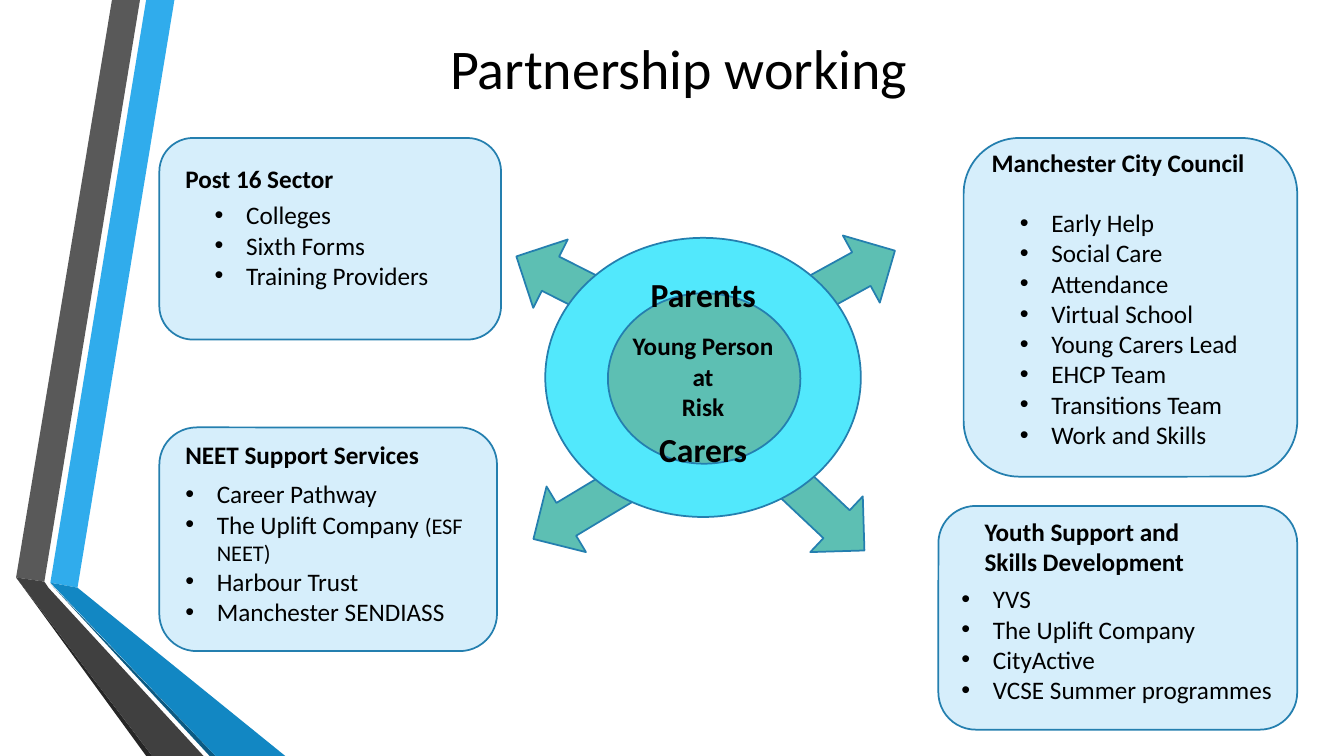
import pptx
import pptx.util
import pptx.dml.color
import pptx.enum.shapes
import pptx.enum.text
from lxml import etree

Pt = pptx.util.Pt
RGBColor = pptx.dml.color.RGBColor
MSO_SHAPE = pptx.enum.shapes.MSO_SHAPE
PP_ALIGN = pptx.enum.text.PP_ALIGN
MSO_ANCHOR = pptx.enum.text.MSO_ANCHOR

BLACK = RGBColor(0x00, 0x00, 0x00)
OUTLINE = RGBColor(0x24, 0x7F, 0xAF)
CARD_FILL = RGBColor(0xD6, 0xEE, 0xFB)
CYAN = RGBColor(0x52, 0xE8, 0xFC)
TEAL = RGBColor(0x5D, 0xBF, 0xB3)
BRIGHT_BLUE = RGBColor(0x30, 0xAC, 0xEC)
MID_BLUE = RGBColor(0x12, 0x87, 0xC3)
DEEP_BLUE = RGBColor(0x0C, 0x5A, 0x82)
GREY = RGBColor(0x59, 0x59, 0x59)
DARK_GREY = RGBColor(0x40, 0x40, 0x40)
CHARCOAL = RGBColor(0x26, 0x26, 0x26)

FONT = "Calibri"
BULLET_INDENT = Pt(22.5)

# Ribbon facets: colour and corner points
RIBBON = [
    (BRIGHT_BLUE, [(36, 416.2), (55.4, 419.8), (124.6, 0), (104.4, 0)]),
    (GREY, [(100, 0), (80, 0), (11.5, 412.5), (31.7, 415.5)]),
    (CHARCOAL, [(11.5, 412.5), (104.4, 540), (108.7, 540)]),
    (DEEP_BLUE, [(36, 416.9), (149.8, 540), (154.1, 540)]),
    (MID_BLUE, [(36, 416.2), (154.1, 540), (203.8, 540), (55.4, 419.8)]),
    (DARK_GREY, [(145.4, 540), (34.6, 419.8), (31.7, 415.5), (11.5, 412.5), (108.7, 540)]),
]

# Arrows: centre x, centre y, length, rotation
ARROW_WIDTH = 54.7
ARROWS = [
    (576, 354.2, 113.8, 133.3),
    (429.8, 355.7, 113.8, 239),
    (605.5, 197.6, 77, 61.2),
    (403.2, 200.5, 77, 296.8),
]

# Cards: frame, heading box, heading lines, list box, list items (each a list of text and size)
CARDS = [
    ((688.3, 98.6, 238.3, 241.9),
     (701.3, 101.5, 225.4, 28.8), ["Manchester City Council"],
     (721.4, 144.7, 218.2, 203.8),
     [[("Early Help", 18)], [("Social Care", 18)], [("Attendance", 18)],
      [("Virtual School", 18)], [("Young Carers Lead", 18)], [("EHCP Team", 18)],
      [("Transitions Team", 18)], [("Work and Skills", 18)]]),
    ((670.3, 361.4, 256.3, 159.8),
     (696.2, 365, 268.6, 51.1), ["Youth Support and", "Skills Development"],
     (679.7, 413.3, 249.1, 94.3),
     [[("YVS", 18)], [("The Uplift Company", 18)], [("CityActive", 18)],
      [("VCSE Summer programmes", 18)]]),
    ((113.8, 305.3, 241.2, 159.8),
     (125.3, 310.3, 208.1, 28.8), ["NEET Support Services"],
     (125.3, 338.4, 220.3, 135.4),
     [[("Career Pathway", 18)], [("The Uplift Company ", 18), ("(ESF NEET)", 16)],
      [("Harbour Trust", 18)], [("Manchester SENDIASS", 18)]]),
    ((113.8, 98.6, 244.1, 144),
     (125.3, 113, 214.6, 28.8), ["Post 16 Sector"],
     (146.2, 139, 178.6, 72.7),
     [[("Colleges", 18)], [("Sixth Forms", 18)], [("Training Providers", 18)]]),
]


def paint(shape, fill, outline=None):
    shape.shadow.inherit = False
    shape.fill.solid()
    shape.fill.fore_color.rgb = fill
    if outline is None:
        shape.line.fill.background()
    else:
        shape.line.color.rgb = outline
        shape.line.width = Pt(1.25)


def add_outlined(slide, kind, frame, fill, rotation=0):
    shape = slide.shapes.add_shape(kind, *[Pt(length) for length in frame])
    paint(shape, fill, OUTLINE)
    shape.rotation = rotation


def add_facet(slide, colour, corners):
    start, *others = [(Pt(x), Pt(y)) for x, y in corners]
    builder = slide.shapes.build_freeform(*start, scale=1.0)
    builder.add_line_segments(others, close=True)
    paint(builder.convert_to_shape(), colour)


def add_run(paragraph, text, size, bold=False):
    run = paragraph.add_run()
    run.text = text
    run.font.name = FONT
    run.font.size = Pt(size)
    run.font.bold = bold
    run.font.color.rgb = BLACK


def add_frame(slide, frame, wrap=True):
    text_frame = slide.shapes.add_textbox(*[Pt(length) for length in frame]).text_frame
    text_frame.word_wrap = wrap
    return text_frame


def add_label(slide, frame, lines, size, bold=True, align=PP_ALIGN.LEFT,
              anchor=MSO_ANCHOR.TOP, wrap=True):
    text_frame = add_frame(slide, frame, wrap)
    text_frame.vertical_anchor = anchor
    paragraph = text_frame.paragraphs[0]
    paragraph.alignment = align
    for number, line in enumerate(lines):
        if number:
            paragraph.add_line_break()
        add_run(paragraph, line, size, bold)


def add_bullet(paragraph):
    properties = paragraph._p.get_or_add_pPr()
    properties.set("marL", str(BULLET_INDENT))
    properties.set("indent", str(-BULLET_INDENT))
    for tag, name, value in (("buFont", "typeface", "Arial"), ("buChar", "char", "•")):
        etree.SubElement(properties, pptx.oxml.ns.qn("a:" + tag)).set(name, value)


def add_bullet_list(slide, frame, items):
    text_frame = add_frame(slide, frame)
    for number, item in enumerate(items):
        paragraph = text_frame.add_paragraph() if number else text_frame.paragraphs[0]
        add_bullet(paragraph)
        for text, size in item:
            add_run(paragraph, text, size)


def add_card(slide, frame, heading_frame, heading, list_frame, items):
    add_outlined(slide, MSO_SHAPE.ROUNDED_RECTANGLE, frame, CARD_FILL)
    add_label(slide, heading_frame, heading, 18)
    add_bullet_list(slide, list_frame, items)


def main():
    presentation = pptx.Presentation()
    presentation.slide_width = Pt(960)
    presentation.slide_height = Pt(540)
    slide = presentation.slides.add_slide(presentation.slide_layouts[6])

    # Folded ribbon on the left
    for colour, corners in RIBBON:
        add_facet(slide, colour, corners)

    # Arrows out of the centre
    for x, y, length, rotation in ARROWS:
        frame = (x - ARROW_WIDTH / 2, y - length / 2, ARROW_WIDTH, length)
        add_outlined(slide, MSO_SHAPE.UP_ARROW, frame, TEAL, rotation)

    # Title
    add_label(slide, (300.2, 17.3, 369.4, 61.2), ["Partnership working"], 40, bold=False,
              align=PP_ALIGN.CENTER, anchor=MSO_ANCHOR.MIDDLE)

    # Young person surrounded by parents and carers
    add_outlined(slide, MSO_SHAPE.OVAL, (389.5, 169.9, 225.4, 199.4), CYAN)
    add_outlined(slide, MSO_SHAPE.OVAL, (434.2, 209.5, 137.5, 121.7), TEAL)
    add_label(slide, (439.9, 232.6, 124.6, 72.7), ["Young Person", "at", "Risk"], 18,
              align=PP_ALIGN.CENTER)
    add_label(slide, (445, 192.2, 114.5, 46.8), ["Parents"], 24,
              align=PP_ALIGN.CENTER, wrap=False)
    add_label(slide, (439.2, 303.1, 126, 49), ["Carers"], 24,
              align=PP_ALIGN.CENTER, wrap=False)

    # Partner cards
    for card in CARDS:
        add_card(slide, *card)

    presentation.save("out.pptx")


if __name__ == "__main__":
    main()
